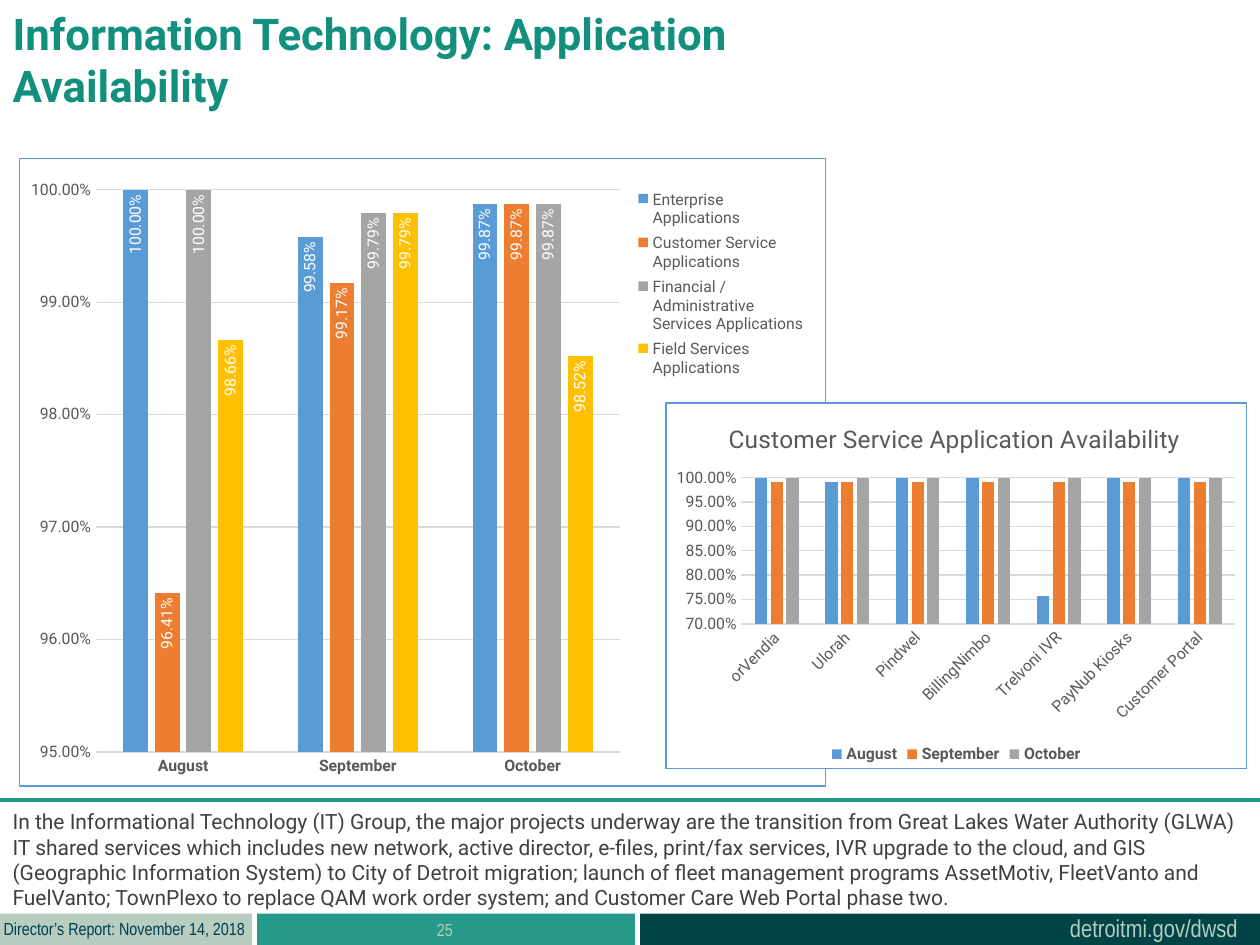
"""Build the application availability slide with two column charts."""
from lxml.etree import SubElement
from pptx import Presentation
from pptx.chart.data import CategoryChartData
from pptx.dml.color import RGBColor
from pptx.enum.chart import XL_CHART_TYPE as ChartType, XL_LABEL_POSITION as LabelPosition
from pptx.enum.chart import XL_LEGEND_POSITION as LegendPosition, XL_TICK_MARK as TickMark
from pptx.enum.shapes import MSO_CONNECTOR as Connector, MSO_SHAPE as Shape
from pptx.enum.text import MSO_ANCHOR as Anchor, MSO_AUTO_SIZE as AutoSize, PP_ALIGN as Align
from pptx.oxml import parse_xml
from pptx.oxml.ns import nsdecls, qn
from pptx.util import Pt

THEME = {
    "heading": "Roboto", "footer": "Arial Narrow", "chart": "Calibri",
    "title_color": "138F7E", "body_color": "404040", "teal": "279989",
    "deep": "004445", "sage": "B7CDC2", "navy": "003B49", "white": "FFFFFF",
    "label": "595959", "grid": "D9D9D9", "border": "5B9BD5",
    "series": ("5B9BD5", "ED7D31", "A5A5A5", "FFC000"),
    "title_size": 25, "body_size": 12, "footer_size": 10, "site_size": 14,
    "chart_size": 10, "label_size": 9, "chart_title_size": 14,
}

TITLE = "Information Technology: Application Availability"
BODY = (
    "In the Informational Technology (IT) Group, the major projects underway are the transition "
    "from Great Lakes Water Authority (GLWA) IT shared services which includes new network, "
    "active director, e-files, print/fax services, IVR upgrade to the cloud, and GIS "
    "(Geographic Information System) to City of Detroit migration; launch of fleet management "
    "programs AssetMotiv, FleetVanto and FuelVanto; TownPlexo to replace QAM work order system; "
    "and Customer Care Web Portal phase two."
)
FOOTER_BARS = [
    ((146.9, 522, 216, 18), "teal"),
    ((365.8, 522, 360, 18), "deep"),
    ((0, 522, 144, 18), "sage"),
]
FOOTER_TEXTS = [
    ("detroitmi.gov/dwsd", (604.3, 518.4, 111.6, 24.5),
     {"size": "site_size", "color": "sage", "wrap": False}),
    ("Director’s Report: November 14, 2018", (-5, 521.3, 157.7, 19.4),
     {"size": "footer_size", "color": "navy", "wrap": False}),
    ("25", (146.2, 521.7, 216, 28.8),
     {"size": "footer_size", "color": "sage", "align": Align.CENTER}),
]
CHARTS = [
    {
        "box": (10.6, 90.2, 461.5, 359.3),
        "categories": ["August", "September", "October"],
        "series": [
            ("Enterprise  Applications", (1, 0.9958, 0.9987)),
            ("Customer Service Applications", (0.9641, 0.9917, 0.9987)),
            ("Financial / Administrative Services Applications", (1, 0.9979, 0.9987)),
            ("Field Services Applications", (0.9866, 0.9979, 0.9852)),
        ],
        "minimum": 0.95, "step": 0.01, "bold_categories": True, "labels": True,
        "plot": (0.095, 0.05, 0.65, 0.896),
        "legend": LegendPosition.CORNER, "legend_layout": (0.76, 0.04, 0.22, 0.32),
    },
    {
        "box": (380.2, 229.9, 332.6, 209.5),
        "title": "Customer Service Application Availability", "title_layout": (0.1, 0.04),
        "categories": ["orVendia", "Ulorah", "Pindwel", "BillingNimbo",
                       "Trelvoni IVR", "PayNub Kiosks", "Customer Portal"],
        "series": [
            ("August", (1, 0.991, 1, 1, 0.758, 1, 1)),
            ("September", (0.992,) * 7),
            ("October", (0.999,) * 7),
        ],
        "minimum": 0.7, "step": 0.05, "category_turn": -45,
        "plot": (0.13, 0.205, 0.85, 0.4),
        "legend": LegendPosition.BOTTOM, "bold_legend": True,
    },
]


def color(name):
    return RGBColor.from_string(THEME.get(name, name))


def style_font(font, family="heading", size="label_size", fill="label", bold=False):
    font.name, font.size, font.bold = THEME[family], Pt(THEME[size]), bold
    font.color.rgb = color(fill)


def points(box):
    return [Pt(value) for value in box]


def write_text(shape, text, family="footer", size="footer_size", color="navy",
               bold=False, align=Align.LEFT, wrap=True):
    frame = shape.text_frame
    frame.text = text
    frame.word_wrap, frame.auto_size = wrap, AutoSize.NONE
    frame.vertical_anchor = Anchor.TOP
    paragraph = frame.paragraphs[0]
    paragraph.alignment, paragraph.space_before = align, Pt(0)
    style_font(paragraph.runs[0].font, family, size, color, bold)


def remove_bullet(paragraph):
    properties = paragraph._p.get_or_add_pPr()
    properties.set("marL", "0")
    properties.set("indent", "0")
    SubElement(properties, qn("a:buNone"))


def place(shape, box):
    shape.left, shape.top, shape.width, shape.height = points(box)


def set_layout(element, index, values, inner=False):
    for old in element.findall(qn("c:layout")):
        element.remove(old)
    fields = [("layoutTarget", "inner")] if inner else []
    fields += [("xMode", "edge"), ("yMode", "edge"), *zip("xywh", values)]
    layout = parse_xml(f"<c:layout {nsdecls('c')}><c:manualLayout/></c:layout>")
    for tag, value in fields:
        SubElement(layout[0], qn(f"c:{tag}")).set("val", str(value))
    element.insert(index, layout)


def turn_text(element, degrees):
    body = element.find(qn("c:txPr")).find(qn("a:bodyPr"))
    body.set("rot", str(degrees * 60000))
    body.set("vert", "horz")


def add_frame(space):
    space.find(qn("c:chart")).addnext(parse_xml(
        f"<c:spPr {nsdecls('c', 'a')}>"
        f'<a:solidFill><a:srgbClr val="{THEME["white"]}"/></a:solidFill>'
        f'<a:ln w="{Pt(0.75)}"><a:solidFill><a:srgbClr val="{THEME["border"]}"/>'
        "</a:solidFill></a:ln></c:spPr>"))


def style_axes(chart, content):
    categories, values = chart.category_axis, chart.value_axis
    for axis in (categories, values):
        axis.major_tick_mark = axis.minor_tick_mark = TickMark.NONE
    style_font(categories.tick_labels.font, bold=content.get("bold_categories", False))
    style_font(values.tick_labels.font)
    if "category_turn" in content:
        turn_text(categories._element, content["category_turn"])
    values.minimum_scale, values.maximum_scale = content["minimum"], 1
    values.major_unit = content["step"]
    values.tick_labels.number_format = "0.00%"
    values.tick_labels.number_format_is_linked = False
    values.format.line.fill.background()
    values.has_major_gridlines = True
    for line in (categories.format.line, values.major_gridlines.format.line):
        line.color.rgb, line.width = color("grid"), Pt(0.75)


def style_series(series, fill, labelled):
    series.format.fill.solid()
    series.format.fill.fore_color.rgb = color(fill)
    series.invert_if_negative = False
    if labelled:
        labels = series.data_labels
        labels.show_value, labels.position = True, LabelPosition.INSIDE_END
        labels.number_format, labels.number_format_is_linked = "0.00%", False
        style_font(labels.font, fill="white")
        turn_text(labels._element, -90)


def add_column_chart(slide, content):
    data = CategoryChartData(number_format="0.00%")
    data.categories = content["categories"]
    for name, values in content["series"]:
        data.add_series(name, values)
    chart = slide.shapes.add_chart(
        ChartType.COLUMN_CLUSTERED, *points(content["box"]), data).chart
    style_font(chart.font, "chart", "chart_size", "000000")
    add_frame(chart._chartSpace)
    style_axes(chart, content)
    plot = chart.plots[0]
    plot.gap_width, plot.overlap, plot.vary_by_categories = 219, -27, False
    for series, fill in zip(plot.series, THEME["series"]):
        style_series(series, fill, content.get("labels", False))
    set_layout(chart._chartSpace.chart.plotArea, 0, content["plot"], inner=True)
    chart.has_legend = True
    chart.legend.position, chart.legend.include_in_layout = content["legend"], False
    style_font(chart.legend.font, bold=content.get("bold_legend", False))
    if "legend_layout" in content:
        set_layout(chart.legend._element, 1, content["legend_layout"])
    chart.has_title = "title" in content
    if chart.has_title:
        frame = chart.chart_title.text_frame
        frame.text = content["title"]
        style_font(frame.paragraphs[0].runs[0].font, size="chart_title_size")
        set_layout(chart.chart_title._element, 1, content["title_layout"])


def main():
    presentation = Presentation()
    presentation.slide_width, presentation.slide_height = Pt(720), Pt(540)
    slide = presentation.slides.add_slide(presentation.slide_layouts[1])
    title, body = slide.placeholders
    place(title, (0, 0, 546.5, 55.4))
    write_text(title, TITLE, "heading", "title_size", "title_color", bold=True)
    place(body, (0, 458.6, 720, 65.5))
    write_text(body, BODY, "heading", "body_size", "body_color")
    remove_bullet(body.text_frame.paragraphs[0])
    for box, fill in FOOTER_BARS:
        bar = slide.shapes.add_shape(Shape.RECTANGLE, *points(box))
        bar.shadow.inherit = False
        bar.fill.solid()
        bar.fill.fore_color.rgb = color(fill)
        bar.line.fill.background()
    for text, box, style in FOOTER_TEXTS:
        write_text(slide.shapes.add_textbox(*points(box)), text, **style)
    rule = slide.shapes.add_connector(Connector.STRAIGHT, *points((720, 457.2, 0, 457.2)))
    rule.line.color.rgb, rule.line.width = color("teal"), Pt(2.25)
    SubElement(rule._element.spPr, qn("a:effectLst"))
    for content in CHARTS:
        add_column_chart(slide, content)
    presentation.save("out.pptx")


if __name__ == "__main__":
    main()
